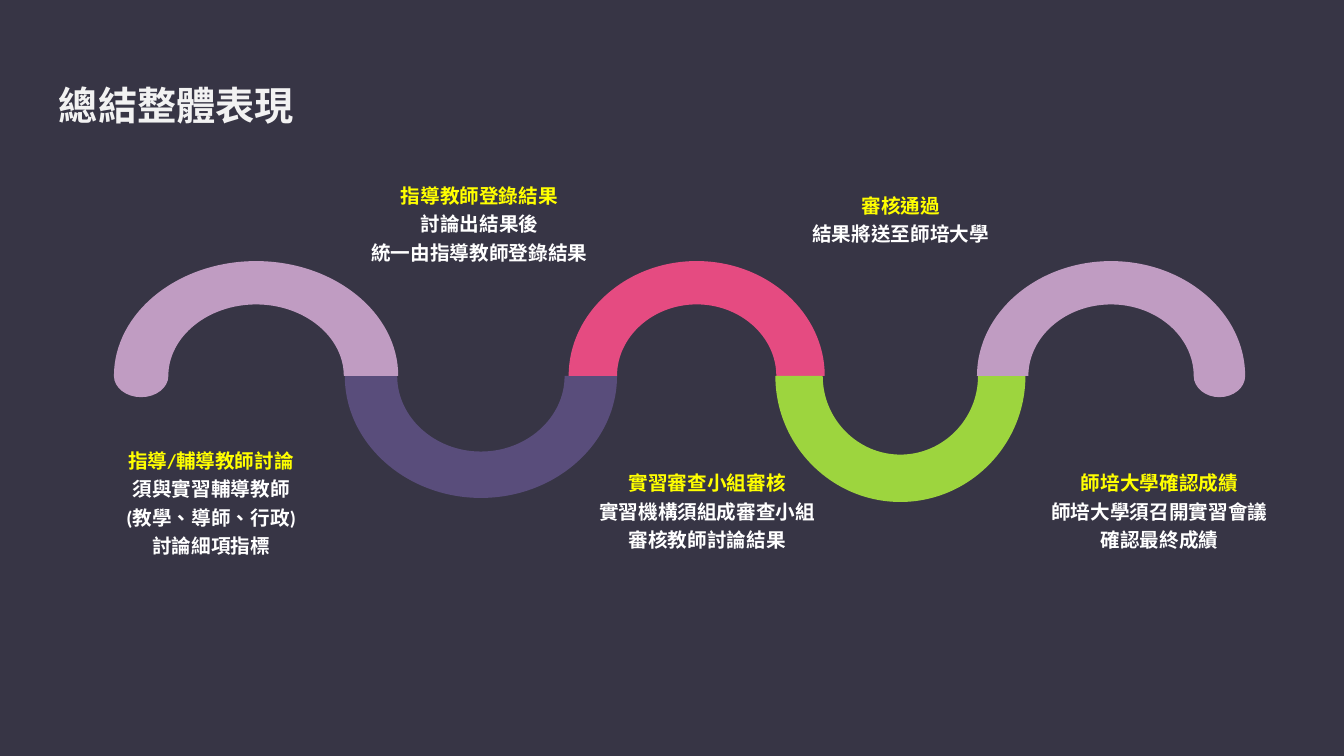
"""Build a slide showing five review steps along a winding band."""
from dataclasses import dataclass

from lxml import etree
from pptx import Presentation
from pptx.dml.color import RGBColor
from pptx.enum.lang import MSO_LANGUAGE_ID
from pptx.enum.text import MSO_ANCHOR, MSO_AUTO_SIZE, PP_ALIGN
from pptx.oxml.ns import qn
from pptx.util import Inches, Pt

CENTER = PP_ALIGN.CENTER
TOP = MSO_ANCHOR.TOP
MIDDLE = MSO_ANCHOR.MIDDLE
NO_FIT = MSO_AUTO_SIZE.NONE
TRADITIONAL_CHINESE = MSO_LANGUAGE_ID.TRADITIONAL_CHINESE
TITLE_ONLY = 5


@dataclass(frozen=True)
class Theme:
    background: str = "373545"
    title: str = "F2F2F2"
    heading: str = "FFFF00"
    detail: str = "FFFFFF"
    purple: str = "594D7B"
    pink: str = "E54B81"
    green: str = "9DD53E"
    lilac: str = "C09CC2"
    title_font: str = "Noto Sans CJK SC"
    step_font: str = "Calibri"
    title_size: int = 28
    step_size: int = 14
    line_spacing: float = 1.2


THEME = Theme()

TITLE = "總結整體表現"
TITLE_BOX = (-0.36, 0.76, 4.22, 0.57)

STEPS = [
    ((1.13, 4.41, 1.93, 1.3),
     ["指導/輔導教師討論", "須與實習輔導教師", "(教學、導師、行政)", "討論細項指標"]),
    ((3.55, 1.78, 2.41, 1.11),
     ["指導教師登錄結果", "討論出結果後", "統一由指導教師登錄結果"]),
    ((5.93, 4.63, 2.17, 1.02),
     ["實習審查小組審核", "實習機構須組成審查小組", "審核教師討論結果"]),
    ((7.97, 1.88, 1.93, 0.73),
     ["審核通過", "結果將送至師培大學"]),
    ((10.26, 4.63, 2.48, 1.02),
     ["師培大學確認成績", "師培大學須召開實習會議", "確認最終成績"]),
]

UP, DOWN = -1, 1
LEFT, RIGHT = -1, 1
BASELINE = 3.73
CAP_DEPTH = 0.21
CURVE_RATIO = 0.55
BENDS = [
    (4.77, (1.35, 1.21), (0.83, 0.75), DOWN, None, THEME.purple),
    (6.91, (1.27, 1.14), (0.79, 0.71), UP, None, THEME.pink),
    (8.93, (1.24, 1.25), (0.77, 0.78), DOWN, None, THEME.green),
    (2.54, (1.41, 1.14), (0.87, 0.71), UP, LEFT, THEME.lilac),
    (11.02, (1.33, 1.14), (0.82, 0.71), UP, RIGHT, THEME.lilac),
]


def half_ellipse(center, radii, side):
    k = CURVE_RATIO
    unit = [(1, 0), (1, k), (k, 1), (0, 1), (-k, 1), (-1, k), (-1, 0)]
    return [(center + radii[0] * x, BASELINE + side * radii[1] * y) for x, y in unit]


def bend_outline(center, outer, inner, side, cap_end):
    outer_edge = half_ellipse(center, outer, side)
    inner_edge = half_ellipse(center, inner, side)[::-1]
    left_end = inner_edge[:1] * 3
    right_end = outer_edge[:1] * 3
    if cap_end:
        cap_center = center + cap_end * (outer[0] + inner[0]) / 2
        cap_radii = ((outer[0] - inner[0]) / 2, CAP_DEPTH)
        cap = half_ellipse(cap_center, cap_radii, -side)[::-1][1:]
        if cap_end == LEFT:
            left_end = cap
        else:
            right_end = cap
    return outer_edge + left_end + inner_edge[1:] + right_end


def curve_segments(shape):
    segments = list(shape._element.iter(qn("a:lnTo")))
    for start in range(0, len(segments), 3):
        curve = etree.Element(qn("a:cubicBezTo"))
        segments[start].addprevious(curve)
        for segment in segments[start:start + 3]:
            curve.append(segment[0])
            segment.getparent().remove(segment)


def add_bend(slide, center, outer, inner, side, cap_end, color):
    outline = bend_outline(center, outer, inner, side, cap_end)
    points = [(Inches(x), Inches(y)) for x, y in outline]
    builder = slide.shapes.build_freeform(*points[0])
    builder.add_line_segments(points[1:], close=True)
    bend = builder.convert_to_shape()
    curve_segments(bend)
    bend.shadow.inherit = False
    bend.fill.solid()
    bend.fill.fore_color.rgb = RGBColor.from_string(color)
    bend.line.fill.background()


def place(shape, box):
    shape.left, shape.top, shape.width, shape.height = map(Inches, box)


def set_up_frame(frame, anchor, inset):
    frame.word_wrap = True
    frame.auto_size = NO_FIT
    frame.vertical_anchor = anchor
    frame.margin_left = frame.margin_right = 0
    frame.margin_top = frame.margin_bottom = Inches(inset)


def format_paragraph(paragraph, face, size, color, spacing):
    paragraph.alignment = CENTER
    paragraph.line_spacing = spacing
    for run in paragraph.runs:
        font = run.font
        font.name, font.size, font.bold = face, Pt(size), True
        font.language_id = TRADITIONAL_CHINESE
        font.color.rgb = RGBColor.from_string(color)
        latin = run._r.get_or_add_rPr().find(qn("a:latin"))
        latin.addnext(etree.Element(qn("a:ea"), typeface=face))


def add_title(slide):
    title = slide.shapes.title
    place(title, TITLE_BOX)
    title.text_frame.text = TITLE
    set_up_frame(title.text_frame, MIDDLE, 0.05)
    format_paragraph(title.text_frame.paragraphs[0], THEME.title_font,
                     THEME.title_size, THEME.title, 1.0)


def add_step(slide, box, lines):
    frame = slide.shapes.add_textbox(*map(Inches, box)).text_frame
    frame.text = "\n".join(lines)
    set_up_frame(frame, TOP, 0)
    for index, paragraph in enumerate(frame.paragraphs):
        color = THEME.detail if index else THEME.heading
        format_paragraph(paragraph, THEME.step_font, THEME.step_size,
                         color, THEME.line_spacing)


def main():
    presentation = Presentation()
    presentation.slide_width = Inches(13.33)
    presentation.slide_height = Inches(7.5)
    slide = presentation.slides.add_slide(presentation.slide_layouts[TITLE_ONLY])
    slide.background.fill.solid()
    slide.background.fill.fore_color.rgb = RGBColor.from_string(THEME.background)
    add_title(slide)
    for bend in BENDS:
        add_bend(slide, *bend)
    for box, lines in STEPS:
        add_step(slide, box, lines)
    presentation.save("out.pptx")


if __name__ == "__main__":
    main()
